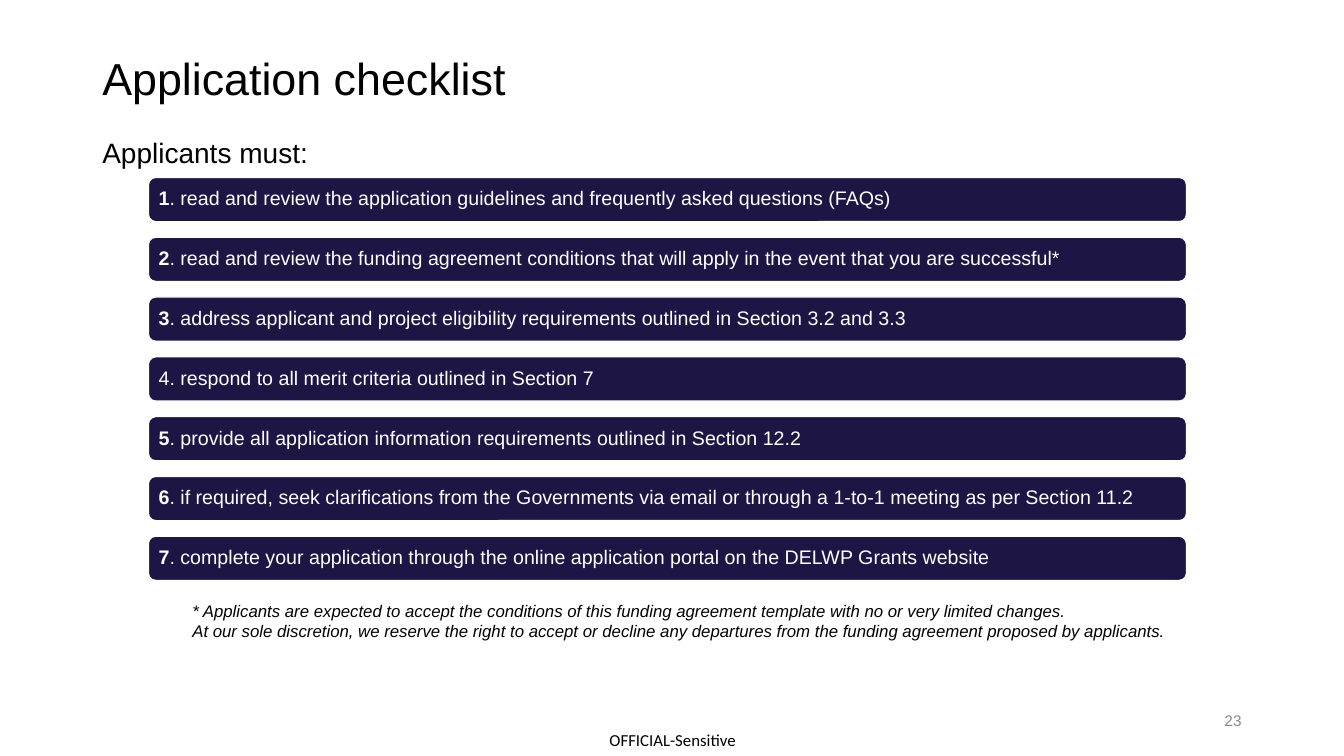
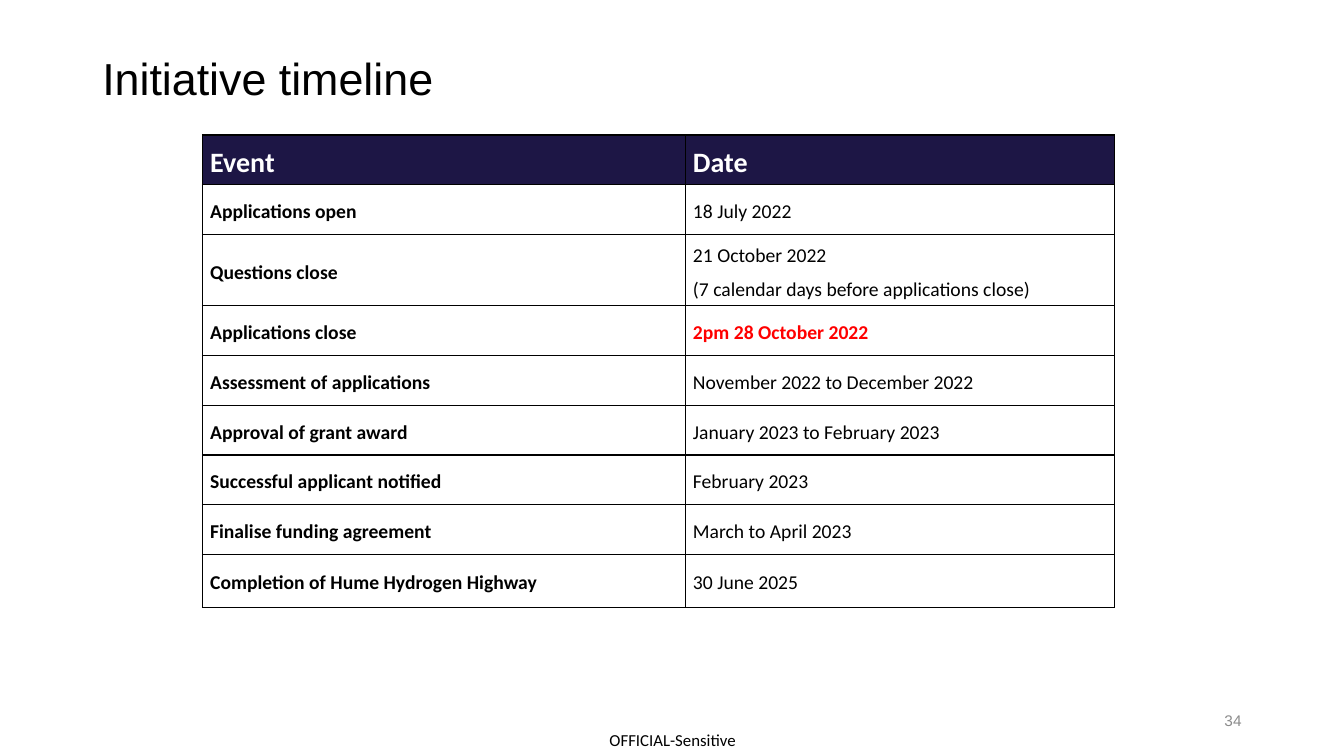
from lxml import etree
from pptx import Presentation
from pptx.dml.color import RGBColor
from pptx.enum.shapes import MSO_SHAPE as Shape
from pptx.enum.text import MSO_ANCHOR as Anchor, PP_ALIGN as Align
from pptx.oxml.ns import qn
from pptx.util import Pt

NAVY = RGBColor(0x1D, 0x16, 0x45)
BLACK = RGBColor(0, 0, 0)
WHITE = RGBColor(0xFF, 0xFF, 0xFF)
GREY = RGBColor(0x8C, 0x8C, 0x8C)
RED = RGBColor(0xFF, 0, 0)
SANS, BODY = "Arial", "Calibri"

STEPS = [
    ("1", ". read and review the application guidelines and frequently asked questions (FAQs)"),
    ("2", ". read and review the funding agreement conditions that will apply in the event that you are successful*"),
    ("3", ". address applicant and project eligibility requirements outlined in Section 3.2 and 3.3"),
    ("", "4. respond to all merit criteria outlined in Section 7"),
    ("5", ". provide all application information requirements outlined in Section 12.2"),
    ("6", ". if required, seek clarifications from the Governments via email or through a 1-to-1 meeting as per Section 11.2"),
    ("7", ". complete your application through the online application portal on the DELWP Grants website"),
]
NOTES = [
    "* Applicants are expected to accept the conditions of this funding agreement template with no or very limited changes.",
    "At our sole discretion, we reserve the right to accept or decline any departures from the funding agreement proposed by applicants.",
]
HEAD = ("Event", "Date")
EVENTS = [
    ("Applications open", "18 July 2022"),
    ("Questions close", "21 October 2022\n(7 calendar days before applications close)"),
    ("Applications close", "2pm 28 October 2022"),
    ("Assessment of applications", "November 2022 to December 2022"),
    ("Approval of grant award", "January 2023 to February 2023"),
    ("Successful applicant notified", "February 2023"),
    ("Finalise funding agreement", "March to April 2023"),
    ("Completion of Hume Hydrogen Highway", "30 June 2025"),
]
URGENT = "2pm 28 October 2022"


def add_run(para, text, size, color=BLACK, name=SANS, bold=False, italic=False):
    run = para.add_run()
    run.text = text
    font = run.font
    font.size, font.name, font.bold, font.italic = Pt(size), name, bold, italic
    font.color.rgb = color


def add_lines(frame, lines, size, spacing=1.0, align=Align.LEFT, before=0, after=0, **style):
    """Fill a text frame with one paragraph for each line."""
    for i, line in enumerate(lines):
        para = frame.add_paragraph() if i else frame.paragraphs[0]
        para.alignment, para.line_spacing = align, spacing
        para.space_before, para.space_after = Pt(before if i else 0), Pt(after)
        add_run(para, line, size, **style)


def add_text(slide, box, lines, size, anchor=Anchor.TOP, inset=True, **style):
    frame = slide.shapes.add_textbox(*map(Pt, box)).text_frame
    frame.word_wrap, frame.vertical_anchor = True, anchor
    if not inset:
        frame.margin_left = frame.margin_right = 0
        frame.margin_top = frame.margin_bottom = 0
    add_lines(frame, lines, size, **style)


def new_slide(deck, title, number):
    """Add a slide with the shared footer, title and page number."""
    slide = deck.slides.add_slide(deck.slide_layouts[6])
    add_text(slide, (422, 517, 117, 23), ["OFFICIAL-Sensitive"], 12, Anchor.MIDDLE,
             inset=False, align=Align.CENTER, name=BODY)
    add_text(slide, (66, 28.8, 828, 58.3), [title], 32, Anchor.MIDDLE, spacing=0.9)
    add_text(slide, (678, 500.4, 216, 28.8), [str(number)], 11, Anchor.MIDDLE,
             align=Align.RIGHT, color=GREY)
    return slide


def add_steps(slide, box, steps):
    """Stack equal bars down the box, with even gaps between them."""
    left, top, width, height = box
    bar = 31.7
    pitch = (height - bar) / (len(steps) - 1)
    for i, (mark, text) in enumerate(steps):
        shape = slide.shapes.add_shape(
            Shape.ROUNDED_RECTANGLE, Pt(left), Pt(top + i * pitch), Pt(width), Pt(bar))
        shape.shadow.inherit = False
        shape.fill.solid()
        shape.fill.fore_color.rgb = NAVY
        shape.line.color.rgb = WHITE
        shape.line.width = Pt(1)
        frame = shape.text_frame
        frame.word_wrap, frame.vertical_anchor = True, Anchor.MIDDLE
        frame.margin_left = frame.margin_right = Pt(5.8)
        para = frame.paragraphs[0]
        para.alignment, para.line_spacing = Align.LEFT, 0.9
        if mark:
            add_run(para, mark, 14, WHITE, bold=True)
        add_run(para, text, 14, WHITE)


def add_edges(cell):
    """Draw a thin black line on all four sides of a cell."""
    props = cell._tc.get_or_add_tcPr()
    for side in ("a:lnL", "a:lnR", "a:lnT", "a:lnB"):
        line = etree.SubElement(props, qn(side), w=str(Pt(1)))
        fill = etree.SubElement(line, qn("a:solidFill"))
        etree.SubElement(fill, qn("a:srgbClr"), val=str(BLACK))


def set_cell(cell, text, head, bold):
    add_edges(cell)
    if head:
        cell.fill.solid()
        cell.fill.fore_color.rgb = NAVY
    else:
        cell.fill.background()
    cell.vertical_anchor = Anchor.MIDDLE
    cell.margin_left = cell.margin_right = Pt(5.4)
    cell.margin_top = cell.margin_bottom = 0
    color = WHITE if head else RED if text == URGENT else BLACK
    add_lines(cell.text_frame, text.split("\n"), 20 if head else 14, spacing=1.2,
              before=2, after=2, color=color, name=BODY, bold=bold)


def add_events(slide, left, top, widths, heights):
    rows = [HEAD, *EVENTS]
    table = slide.shapes.add_table(
        len(rows), len(HEAD), Pt(left), Pt(top), Pt(sum(widths)), Pt(sum(heights))).table
    table.horz_banding = False
    for col, width in zip(table.columns, widths):
        col.width = Pt(width)
    for r, (row, height) in enumerate(zip(rows, heights)):
        table.rows[r].height = Pt(height)
        for c, text in enumerate(row):
            bold = r == 0 or c == 0 or text == URGENT
            set_cell(table.cell(r, c), text, r == 0, bold)


def checklist(deck):
    slide = new_slide(deck, "Application checklist", 23)
    add_text(slide, (66, 88.5, 828, 345), ["Applicants must:"], 20, spacing=1.2)
    add_steps(slide, (106, 126.7, 741.6, 288), STEPS)
    add_text(slide, (130.3, 425.5, 807, 36), NOTES, 12, italic=True)


def timeline(deck):
    slide = new_slide(deck, "Initiative timeline", 34)
    add_events(slide, 144.7, 96.5, (344.9, 306.7), [35.5, 35.5, 51] + [35.5] * 5 + [38])


def main():
    deck = Presentation()
    deck.slide_width, deck.slide_height = Pt(960), Pt(540)
    checklist(deck)
    timeline(deck)
    deck.save("out.pptx")


if __name__ == "__main__":
    main()
